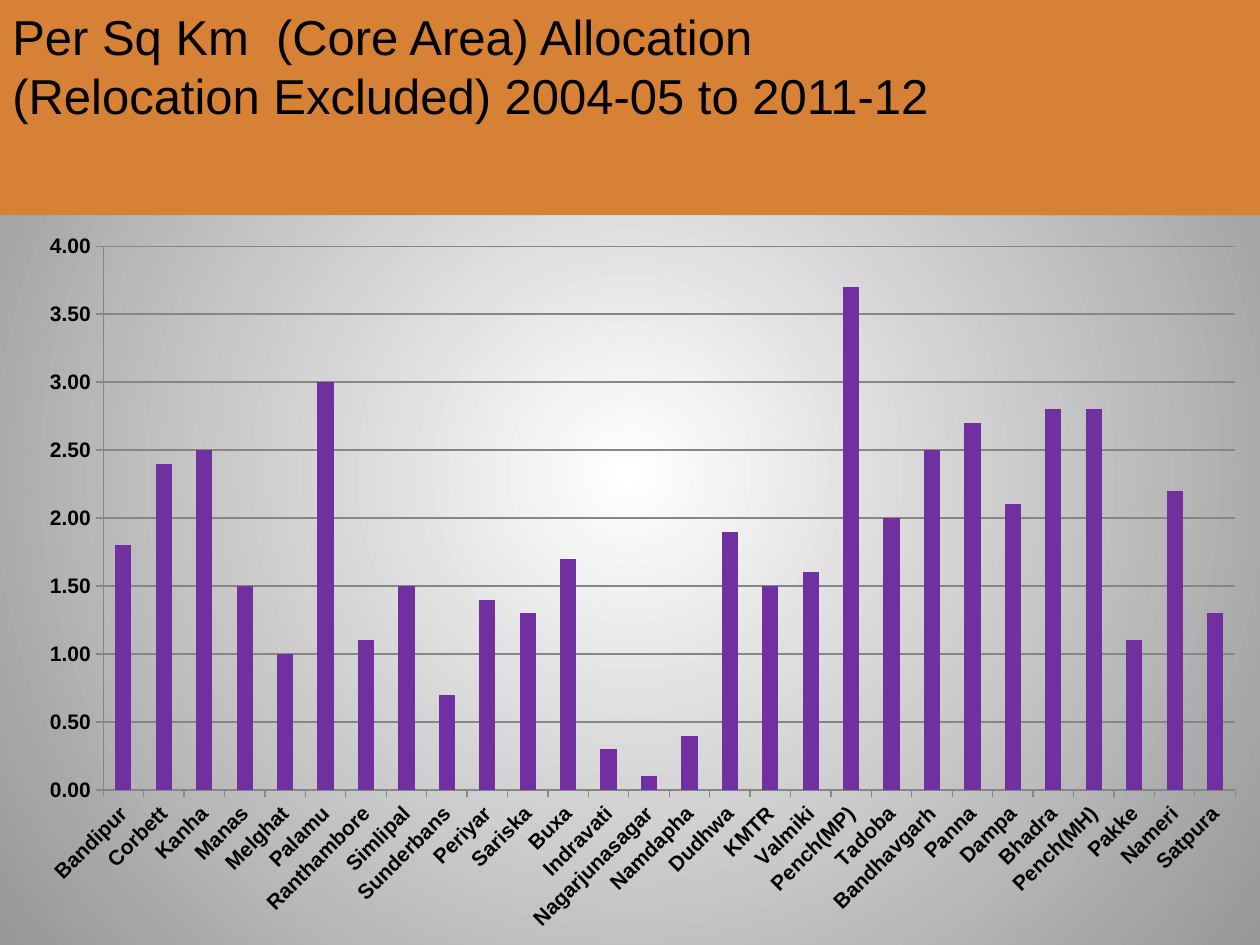
from dataclasses import dataclass

from pptx import Presentation
from pptx.chart.data import CategoryChartData
from pptx.dml.color import RGBColor
from pptx.enum.chart import XL_CHART_TYPE, XL_TICK_MARK
from pptx.enum.shapes import MSO_SHAPE
from pptx.enum.text import MSO_ANCHOR, PP_ALIGN
from pptx.oxml import parse_xml
from pptx.oxml.ns import nsdecls, qn
from pptx.util import Pt

COLUMNS = XL_CHART_TYPE.COLUMN_CLUSTERED
OUTSIDE = XL_TICK_MARK.OUTSIDE
RECTANGLE = MSO_SHAPE.RECTANGLE
TOP = MSO_ANCHOR.TOP
LEFT = PP_ALIGN.LEFT


@dataclass(frozen=True)
class Theme:
    font: str = "Arial"
    title_size: float = 28
    chart_size: float = 12
    ink: str = "000000"
    banner: str = "D68135"
    column: str = "7030A0"
    grid: str = "868686"
    glow: str = "FFFFFF"
    edge: str = "979797"


@dataclass(frozen=True)
class Box:
    left: float
    top: float
    width: float
    height: float

    def inner(self, left, top, width, height):
        return Box(self.left + left, self.top + top, width, height)

    def lengths(self):
        return Pt(self.left), Pt(self.top), Pt(self.width), Pt(self.height)


THEME = Theme()
TITLE = "Per Sq Km  (Core Area) Allocation (Relocation Excluded) 2004-05 to 2011-12"
ALLOCATIONS = {
    "Bandipur": 1.8, "Corbett": 2.4, "Kanha": 2.5, "Manas": 1.5,
    "Melghat": 1, "Palamu": 3, "Ranthambore": 1.1, "Simlipal": 1.5,
    "Sunderbans": 0.7, "Periyar": 1.4, "Sariska": 1.3, "Buxa": 1.7,
    "Indravati": 0.3, "Nagarjunasagar": 0.1, "Namdapha": 0.4, "Dudhwa": 1.9,
    "KMTR": 1.5, "Valmiki": 1.6, "Pench(MP)": 3.7, "Tadoba": 2,
    "Bandhavgarh": 2.5, "Panna": 2.7, "Dampa": 2.1, "Bhadra": 2.8,
    "Pench(MH)": 2.8, "Pakke": 1.1, "Nameri": 2.2, "Satpura": 1.3,
}


def color(value):
    return RGBColor.from_string(value)


def paint_background(slide):
    background = parse_xml(
        f'<p:bg {nsdecls("p", "a")}><p:bgPr><a:gradFill rotWithShape="1"><a:gsLst>'
        f'<a:gs pos="0"><a:srgbClr val="{THEME.glow}"/></a:gs>'
        f'<a:gs pos="100000"><a:srgbClr val="{THEME.edge}"/></a:gs></a:gsLst>'
        '<a:path path="circle">'
        '<a:fillToRect l="50000" t="50000" r="50000" b="50000"/></a:path>'
        '</a:gradFill><a:effectLst/></p:bgPr></p:bg>'
    )
    slide.element.find(qn("p:cSld")).insert(0, background)


def add_banner(slide, box):
    accent_width = 180.7
    accent = box.inner(box.width - accent_width, 0, accent_width, box.height)
    for area in (box, accent):
        band = slide.shapes.add_shape(RECTANGLE, *area.lengths())
        band.shadow.inherit = False
        band.fill.solid()
        band.fill.fore_color.rgb = color(THEME.banner)
        band.line.fill.background()

    title = slide.shapes.add_textbox(*box.inner(0, 0, 581, 118).lengths())
    frame = title.text_frame
    frame.word_wrap = True
    frame.vertical_anchor = TOP
    paragraph = frame.paragraphs[0]
    paragraph.alignment = LEFT
    run = paragraph.add_run()
    run.text = TITLE
    run.font.name = THEME.font
    run.font.size = Pt(THEME.title_size)
    run.font.color.rgb = color(THEME.ink)


def add_allocation_chart(slide, box):
    data = CategoryChartData(number_format="0.00")
    data.categories = list(ALLOCATIONS)
    data.add_series("Series 1", list(ALLOCATIONS.values()))
    chart = slide.shapes.add_chart(COLUMNS, *box.lengths(), data).chart
    chart.has_legend = False
    chart.has_title = False
    chart.font.name = THEME.font
    chart.font.size = Pt(THEME.chart_size)
    chart.font.bold = True
    chart.font.color.rgb = color(THEME.ink)

    plot = chart.plots[0]
    plot.vary_by_categories = False
    plot.gap_width = 150
    columns = plot.series[0].format.fill
    columns.solid()
    columns.fore_color.rgb = color(THEME.column)

    reserves, amounts = chart.category_axis, chart.value_axis
    amounts.minimum_scale = 0
    amounts.maximum_scale = 4
    amounts.major_unit = 0.5
    amounts.has_major_gridlines = True
    amounts.tick_labels.number_format = "0.00"
    amounts.tick_labels.number_format_is_linked = False
    for axis in (reserves, amounts):
        axis.major_tick_mark = OUTSIDE
        axis.format.line.color.rgb = color(THEME.grid)
    amounts.major_gridlines.format.line.color.rgb = color(THEME.grid)

    label_font = reserves.tick_labels.font
    label_font.size = Pt(THEME.chart_size)
    label_font.bold = True
    label_font.name = THEME.font
    label_font.color.rgb = color(THEME.ink)
    label_body = reserves._element.find(qn("c:txPr")).find(qn("a:bodyPr"))
    label_body.set("rot", "-2700000")
    label_body.set("vert", "horz")


def main():
    presentation = Presentation()
    presentation.slide_width = Pt(720)
    presentation.slide_height = Pt(540)
    slide = presentation.slides.add_slide(presentation.slide_layouts[6])
    paint_background(slide)
    add_banner(slide, Box(0, 0, 720, 123))
    add_allocation_chart(slide, Box(14.4, 126, 705.6, 414))
    presentation.save("out.pptx")


if __name__ == "__main__":
    main()
